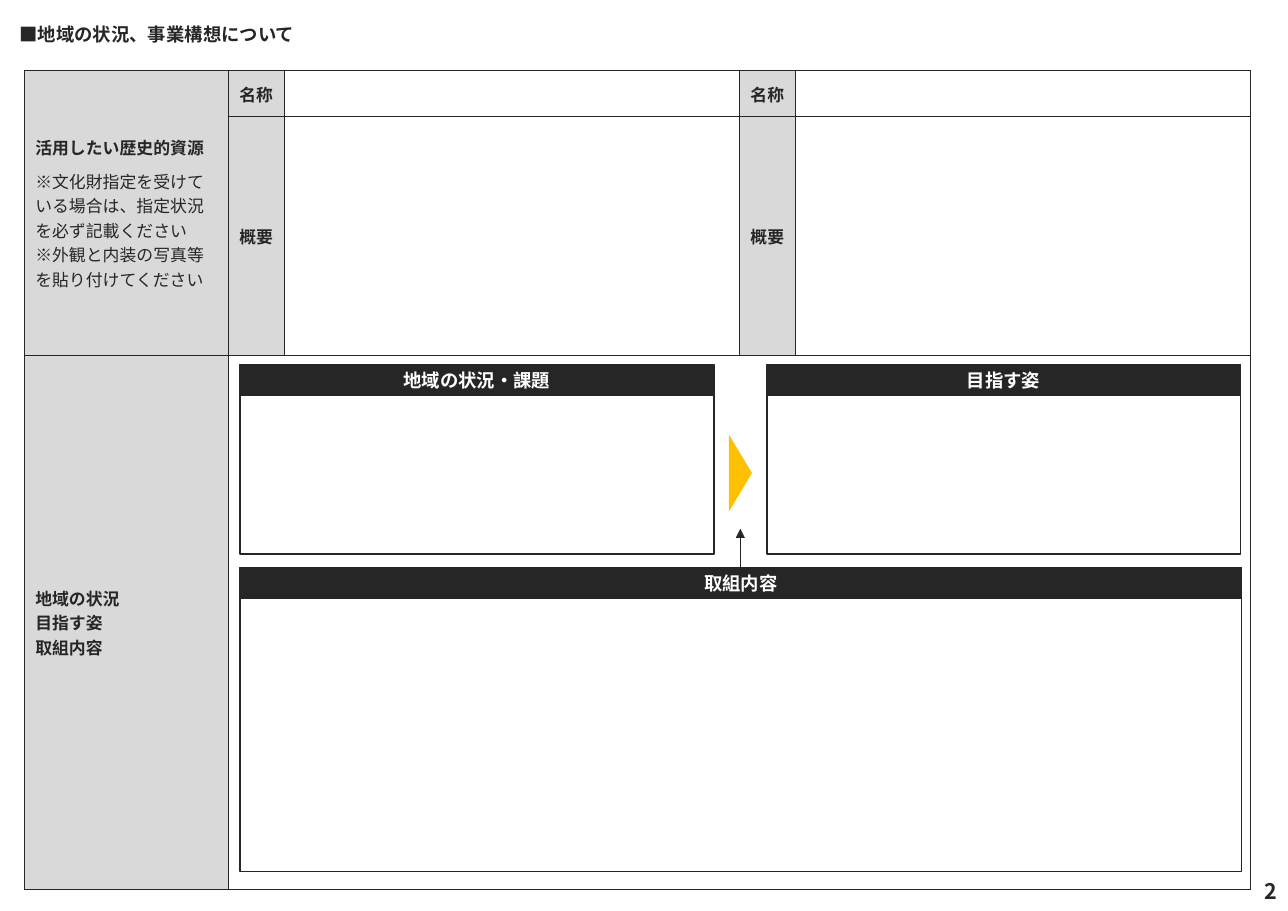
from lxml import etree
from pptx import Presentation
from pptx import util as u
from pptx.dml.color import RGBColor
from pptx.enum import shapes, text
from pptx.oxml.ns import qn

FONT = "Noto Sans CJK JP"
HUE = {"ink": "262626", "grey": "D9D9D9", "white": "FFFFFF", "gold": "FFC000"}
LEFT, MID, RIGHT = text.PP_ALIGN.LEFT, text.PP_ALIGN.CENTER, text.PP_ALIGN.RIGHT


def px(*nums):
    """Turn lengths at 100 px to the inch into EMU."""
    return [u.Emu(n * 9144) for n in nums]


def style(frame, size, hue="ink", align=LEFT):
    """Set bold text in the slide's font, centred vertically."""
    frame.vertical_anchor = text.MSO_ANCHOR.MIDDLE
    for para in frame.paragraphs:
        para.alignment = align
        for run in para.runs:
            font = run.font
            font.name, font.size, font.bold = FONT, u.Pt(size), True
            font.color.rgb = RGBColor.from_string(HUE[hue])
            east = etree.SubElement(font._element, qn("a:ea"))
            east.set("typeface", FONT)


prs = Presentation()
prs.slide_width, prs.slide_height = px(1169, 827)
slide = prs.slides.add_slide(prs.slide_layouts[6])
draw = slide.shapes

# Table
cols, rows = [185, 51, 413, 51, 413], [42, 217, 484]
table = draw.add_table(3, 5, *px(22, 64, sum(cols), sum(rows))).table
table.first_row = table.horz_banding = False
for col, wide in zip(table.columns, px(*cols)):
    col.width = wide
for row, high in zip(table.rows, px(*rows)):
    row.height = high

words = {
    (0, 0): "活用したい歴史的資源\n"
            "※文化財指定を受けている場合は、指定状況を必ず記載ください\n"
            "※外観と内装の写真等を貼り付けてください",
    (2, 0): "地域の状況\n目指す姿\n取組内容",
}
for c in (1, 3):
    words[0, c], words[1, c] = "名称", "概要"

for r in range(3):
    for c in range(5):
        cell = table.cell(r, c)
        props = cell._tc.get_or_add_tcPr()
        for side in "LRTB":
            edge = etree.SubElement(props, qn("a:ln" + side), w="6350")
            paint = etree.SubElement(edge, qn("a:solidFill"))
            etree.SubElement(paint, qn("a:srgbClr"), val=HUE["ink"])
        label = (r, c) in words
        cell.fill.solid()
        cell.fill.fore_color.rgb = RGBColor.from_string(HUE["grey" if label else "white"])
        if label:
            cell.text_frame.text = words[r, c]
            style(cell.text_frame, 11, align=MID if c else LEFT)
            cell.vertical_anchor = text.MSO_ANCHOR.MIDDLE
        else:
            para = cell.text_frame.paragraphs[0]._p
            etree.SubElement(para, qn("a:endParaRPr"), sz="1100")

notes = table.cell(0, 0).text_frame.paragraphs[1:]
notes[0].space_before = u.Pt(6)
for note in notes:
    note.runs[0].font.bold = False
table.cell(0, 0).merge(table.cell(1, 0))
table.cell(2, 1).merge(table.cell(2, 4))

# Panels with a dark heading
HEAD = 28
panels = [
    ("地域の状況・課題", 218, 331, 430, 144),
    ("目指す姿", 696, 331, 430, 144),
    ("取組内容", 218, 515, 909, 248),
]
for title, x, y, wide, high in panels:
    for top, tall, hue in ((y + HEAD, high, "white"), (y, HEAD, "ink")):
        box = draw.add_shape(shapes.MSO_SHAPE.RECTANGLE, *px(x, top, wide, tall))
        box.shadow.inherit = False
        box.fill.solid()
        box.fill.fore_color.rgb = RGBColor.from_string(HUE[hue])
        box.line.color.rgb = RGBColor.from_string(HUE["ink"])
        box.line.width = u.Pt(1)
    frame = box.text_frame
    frame.margin_top = frame.margin_bottom = 0
    frame.text = title
    style(frame, 12, "white", MID)

# Arrows
wedge = draw.add_shape(shapes.MSO_SHAPE.ISOSCELES_TRIANGLE, *px(637, 419, 70, 21))
wedge.rotation = 90
wedge.shadow.inherit = False
wedge.fill.solid()
wedge.fill.fore_color.rgb = RGBColor.from_string(HUE["gold"])
wedge.line.fill.background()

arrow = draw.add_connector(shapes.MSO_CONNECTOR.STRAIGHT, *px(672, 531, 672, 480))
arrow.line.color.rgb = RGBColor.from_string(HUE["ink"])
arrow.line.width = u.Pt(0.5)
etree.SubElement(arrow.line._get_or_add_ln(), qn("a:tailEnd"), type="triangle")
etree.SubElement(arrow._element.spPr, qn("a:effectLst"))

# Slide title and page number
for words, spot, size, align in (
    ("■地域の状況、事業構想について", (8, 16, 563, 30), 12, LEFT),
    ("2", (1136, 791, 33, 36), 14, RIGHT),
):
    frame = draw.add_textbox(*px(*spot)).text_frame
    frame.word_wrap = True
    frame.margin_top = frame.margin_bottom = px(3)[0]
    frame.text = words
    style(frame, size, align=align)

prs.save("out.pptx")
